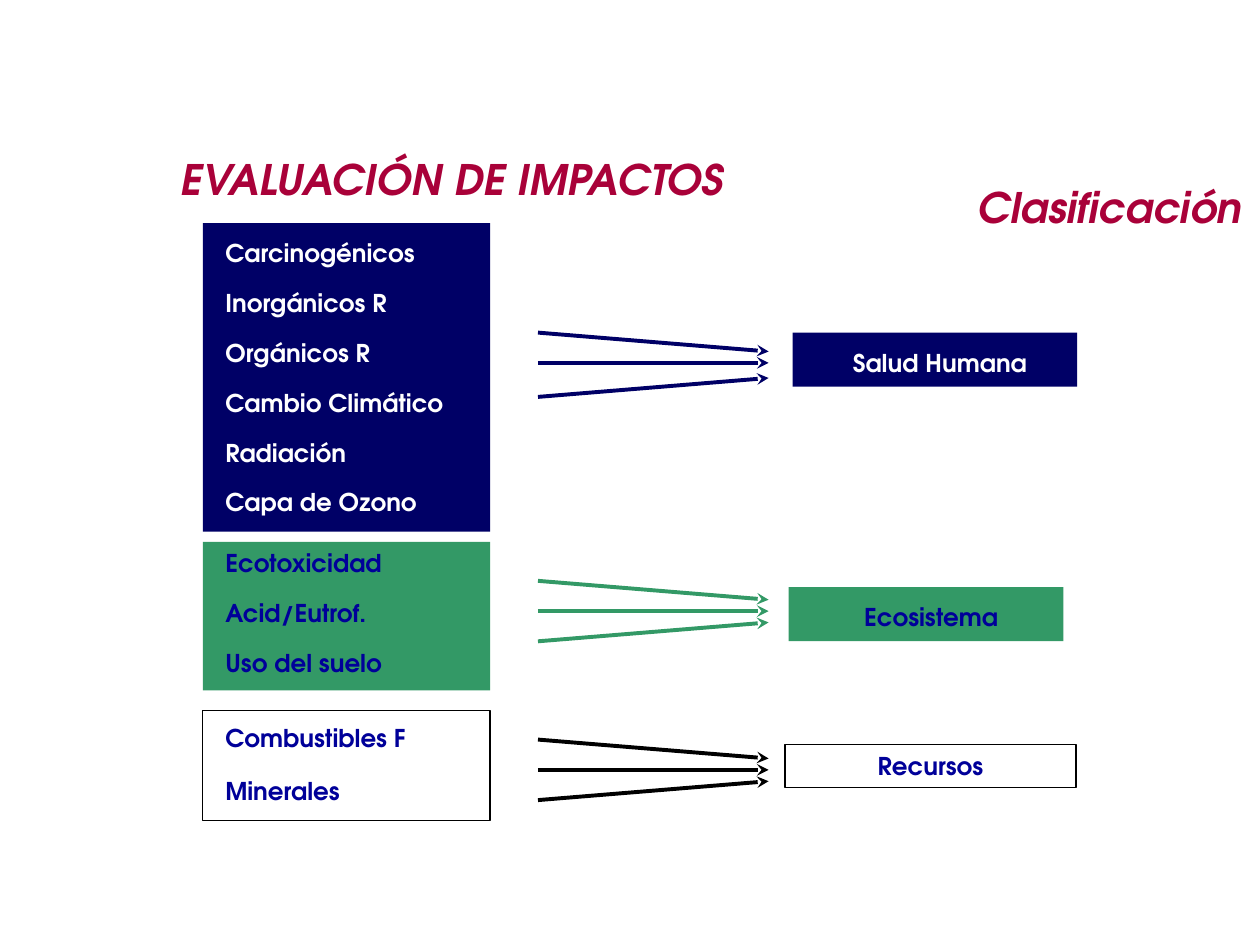
from dataclasses import dataclass

from lxml.etree import SubElement
from pptx import Presentation
from pptx.dml.color import RGBColor
from pptx.enum.shapes import MSO_CONNECTOR, MSO_SHAPE
from pptx.enum.text import MSO_ANCHOR, PP_ALIGN
from pptx.oxml.ns import qn
from pptx.util import Inches, Pt


@dataclass(frozen=True)
class Theme:
    font: str = "TeX Gyre Adventor"
    crimson: str = "A90139"
    navy: str = "000066"
    green: str = "339966"
    blue: str = "000099"
    white: str = "FFFFFF"
    black: str = "000000"
    heading_size: int = 24
    label_size: int = 14
    arrow_width: float = 2.25
    border_width: float = 0.75


THEME = Theme()

# Content: boxes are (left, top, width, height) in inches
HEADING = "EVALUACIÓN DE IMPACTOS"
SUBHEADING = "Clasificación"
GROUPS = [
    dict(impacts=["Carcinogénicos", "Inorgánicos R", "Orgánicos R",
                  "Cambio Climático", "Radiación", "Capa de Ozono"],
         impact_box=(1.61, 1.77, 2.28, 2.45), first_top=1.84, pitch=0.396,
         damage="Salud Humana", damage_box=(6.29, 2.64, 2.26, 0.43),
         damage_inset=(0.18, 0.12), arrow_y=2.88, lower_shift=0.03,
         fill=THEME.navy, border=None, ink=THEME.white, arrow=THEME.navy),
    dict(impacts=["Ecotoxicidad", "Acid/Eutrof.", "Uso del suelo"],
         impact_box=(1.61, 4.3, 2.28, 1.18), first_top=4.3, pitch=0.396,
         damage="Ecosistema", damage_box=(6.26, 4.66, 2.18, 0.43),
         damage_inset=(0.18, 0.12), arrow_y=4.85, lower_shift=0,
         fill=THEME.green, border=None, ink=THEME.blue, arrow=THEME.green),
    dict(impacts=["Combustibles F", "Minerales"],
         impact_box=(1.61, 5.64, 2.28, 0.87), first_top=5.69, pitch=0.42,
         damage="Recursos", damage_box=(6.23, 5.91, 2.31, 0.34),
         damage_inset=(0.1, 0.05), arrow_y=6.11, lower_shift=0,
         fill=THEME.white, border=THEME.black, ink=THEME.blue, arrow=THEME.black),
]
LABEL_LEFT, LABEL_WIDTH, LABEL_HEIGHT = 1.69, 2.2, 0.33
ARROW_LEFT, ARROW_RIGHT = 4.27, 6.1
ARROW_SPREAD = [(-0.24, -0.09), (0, 0), (0.24, 0.09)]


def inches(box):
    return [Inches(value) for value in box]


def write(frame, text, size, color, align=PP_ALIGN.LEFT, italic=False):
    frame.text = text
    frame.vertical_anchor = MSO_ANCHOR.TOP
    paragraph = frame.paragraphs[0]
    paragraph.alignment = align
    font = paragraph.font
    font.name, font.size = THEME.font, Pt(size)
    font.bold, font.italic = True, italic
    font.color.rgb = RGBColor.from_string(color)


def add_panel(slide, box, group):
    panel = slide.shapes.add_shape(MSO_SHAPE.RECTANGLE, *inches(box))
    panel.shadow.inherit = False
    panel.fill.solid()
    panel.fill.fore_color.rgb = RGBColor.from_string(group["fill"])
    if group["border"]:
        panel.line.color.rgb = RGBColor.from_string(group["border"])
        panel.line.width = Pt(THEME.border_width)
    else:
        panel.line.fill.background()
    return panel


def add_arrow(slide, start_y, end_y, color):
    arrow = slide.shapes.add_connector(
        MSO_CONNECTOR.STRAIGHT,
        *inches((ARROW_LEFT, start_y, ARROW_RIGHT, end_y)))
    arrow.line.color.rgb = RGBColor.from_string(color)
    arrow.line.width = Pt(THEME.arrow_width)
    SubElement(arrow.line._get_or_add_ln(), qn("a:tailEnd"), type="stealth")
    SubElement(arrow._element.spPr, qn("a:effectLst"))


def add_group(slide, group):
    # Impact categories
    add_panel(slide, group["impact_box"], group)
    for row, impact in enumerate(group["impacts"]):
        top = group["first_top"] + row * group["pitch"]
        label = slide.shapes.add_textbox(
            *inches((LABEL_LEFT, top, LABEL_WIDTH, LABEL_HEIGHT)))
        label.text_frame.word_wrap = True
        write(label.text_frame, impact, THEME.label_size, group["ink"])

    # Converging arrows
    for start, end in ARROW_SPREAD:
        shift = group["lower_shift"] if start > 0 else 0
        add_arrow(slide, group["arrow_y"] + start + shift,
                  group["arrow_y"] + end + shift, group["arrow"])

    # Damage category
    damage = add_panel(slide, group["damage_box"], group).text_frame
    left, top = group["damage_inset"]
    damage.margin_left, damage.margin_top = Inches(left), Inches(top)
    write(damage, group["damage"], THEME.label_size, group["ink"], PP_ALIGN.CENTER)


def main():
    deck = Presentation()
    deck.slide_width, deck.slide_height = Inches(10), Inches(7.5)
    slide = deck.slides.add_slide(deck.slide_layouts[5])

    # Headings
    heading = slide.shapes.title
    heading.left, heading.top, heading.width, heading.height = inches(
        (1.33, 1.17, 6.5, 0.5))
    subheading = slide.shapes.add_textbox(*inches((7.66, 1.39, 2.3, 0.5)))
    subheading.text_frame.word_wrap = False
    for part, text in ((heading, HEADING), (subheading, SUBHEADING)):
        write(part.text_frame, text, THEME.heading_size, THEME.crimson, italic=True)

    for group in GROUPS:
        add_group(slide, group)
    deck.save("out.pptx")


if __name__ == "__main__":
    main()
